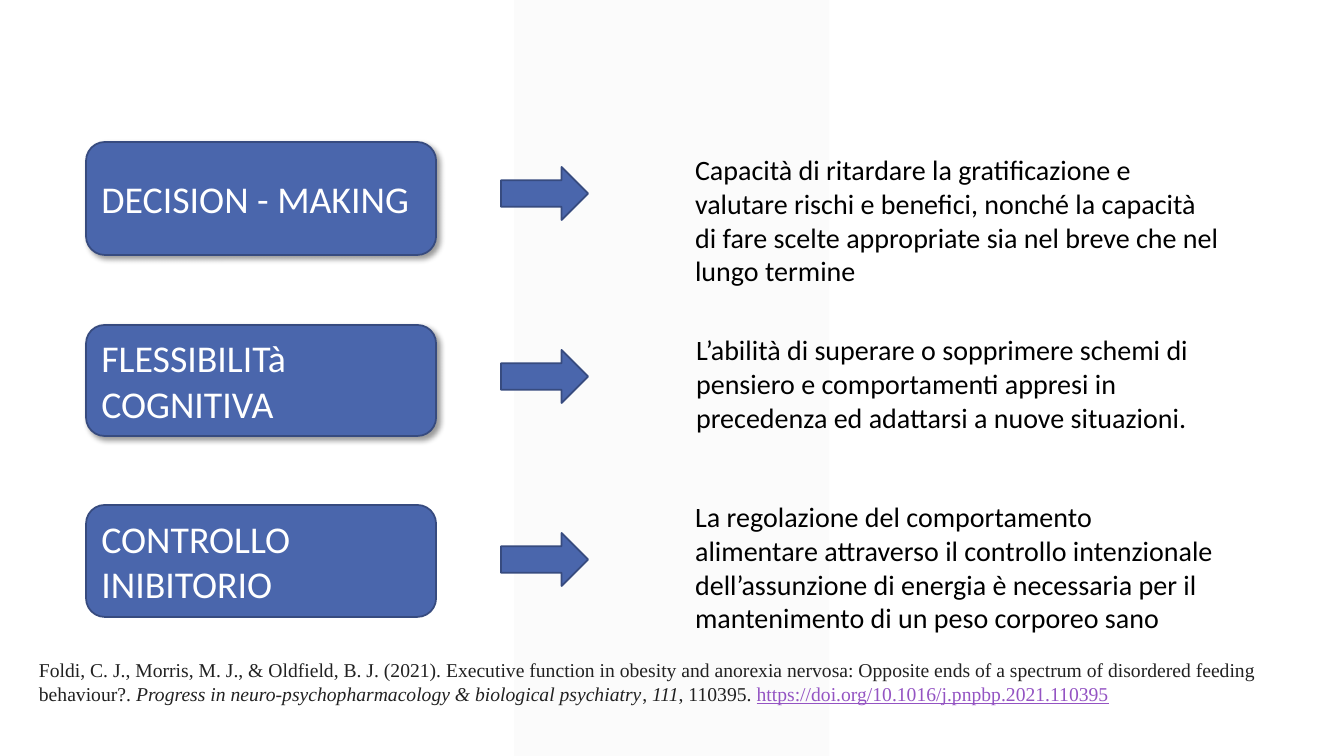
import pptx
import pptx.util
import pptx.dml.color
import pptx.enum.shapes
import pptx.enum.text
import pptx.oxml.ns
from dataclasses import dataclass
from lxml import etree

FUNCTIONS = [
    {"name": "DECISION - MAKING", "name_box": (86, 142, 350, 113), "shadow": True,
     "meaning": "Capacità di ritardare la gratificazione e valutare rischi e benefici, nonché la capacità di fare scelte appropriate sia nel breve che nel lungo termine",
     "meaning_box": (685, 148, 546, 146)},
    {"name": "FLESSIBILITà COGNITIVA", "name_box": (86, 325, 350, 111), "shadow": True,
     "meaning": "L’abilità di superare o sopprimere schemi di pensiero e comportamenti appresi in precedenza ed adattarsi a nuove situazioni.",
     "meaning_box": (686, 328, 543, 112)},
    {"name": "CONTROLLO INIBITORIO", "name_box": (86, 505, 350, 112), "shadow": False,
     "meaning": "La regolazione del comportamento alimentare attraverso il controllo intenzionale dell’assunzione di energia è necessaria per il mantenimento di un peso corporeo sano",
     "meaning_box": (685, 495, 543, 146)},
]
CITATION = [
    ("Foldi, C. J., Morris, M. J., & Oldfield, B. J. (2021). Executive function in obesity and anorexia nervosa: Opposite ends of a spectrum of disordered feeding behaviour?. ", {}),
    ("Progress in neuro-psychopharmacology & biological psychiatry", {"italic": True}),
    (", ", {}),
    ("111", {"italic": True}),
    (", 110395. ", {}),
    ("https://doi.org/10.1016/j.pnpbp.2021.110395", {"color": "9454C3", "underline": True}),
]
CITATION_BOX = (29, 653, 1314, 57)
BAND_BOX = (514, 0, 315, 756)
ARROW_LEFT, ARROW_TOP, ARROW_WIDTH, ARROW_HEIGHT = 501, 167, 87, 53
ARROW_PITCH = 183


@dataclass(frozen=True)
class Theme:
    blue: str = "4A66AC"
    outline: str = "374B7F"
    band: str = "F2F2F2"
    white: str = "FFFFFF"
    black: str = "000000"
    citation: str = "212121"
    sans: str = "Calibri"
    serif: str = "Times New Roman"
    name_size: int = 27
    meaning_size: int = 20
    citation_size: int = 14
    line_width: float = 1.25


THEME = Theme()
EMU_PER_PX = 914400 / 100.8


def emu(*lengths):
    return [round(length * EMU_PER_PX) for length in lengths]


def rgb(color):
    return pptx.dml.color.RGBColor.from_string(color)


def child(parent, tag, **attributes):
    return etree.SubElement(parent, pptx.oxml.ns.qn(tag), attributes)


def write(paragraph, text, *, size, font, color, italic=False, underline=False):
    run = paragraph.add_run()
    run.text = text
    run.font.size = pptx.util.Pt(size)
    run.font.name = font
    run.font.color.rgb = rgb(color)
    run.font.italic = italic
    run.font.underline = underline


def add_block(slide, kind, box, fill, outlined=True):
    block = slide.shapes.add_shape(kind, *emu(*box))
    block.shadow.inherit = False
    block.fill.solid()
    block.fill.fore_color.rgb = rgb(fill)
    if outlined:
        block.line.color.rgb = rgb(THEME.outline)
        block.line.width = pptx.util.Pt(THEME.line_width)
    else:
        block.line.fill.background()
    return block


def add_paragraph_box(slide, box):
    frame = slide.shapes.add_textbox(*emu(*box)).text_frame
    frame.word_wrap = True
    frame.auto_size = pptx.enum.text.MSO_AUTO_SIZE.SHAPE_TO_FIT_TEXT
    return frame.paragraphs[0]


def cast_shadow(block):
    effects = block.element.spPr.find(pptx.oxml.ns.qn("a:effectLst"))
    outer = child(effects, "a:outerShdw", blurRad="50800", dist="38100",
                  dir="2700000", algn="tl", rotWithShape="0")
    color = child(outer, "a:srgbClr", val=THEME.black)
    child(color, "a:alpha", val="40000")


def add_band(slide):
    band = add_block(slide, pptx.enum.shapes.MSO_SHAPE.PARALLELOGRAM, BAND_BOX, THEME.band, False)
    band.adjustments[0] = 0
    color = band.element.spPr.find(
        pptx.oxml.ns.qn("a:solidFill") + "/" + pptx.oxml.ns.qn("a:srgbClr"))
    child(color, "a:alpha", val="30000")


def add_name(slide, function):
    name = add_block(slide, pptx.enum.shapes.MSO_SHAPE.ROUNDED_RECTANGLE,
                     function["name_box"], THEME.blue)
    if function["shadow"]:
        cast_shadow(name)
    name.text_frame.word_wrap = True
    name.text_frame.vertical_anchor = pptx.enum.text.MSO_ANCHOR.MIDDLE
    paragraph = name.text_frame.paragraphs[0]
    paragraph.alignment = pptx.enum.text.PP_ALIGN.LEFT
    write(paragraph, function["name"], size=THEME.name_size, font=THEME.sans, color=THEME.white)


def main():
    deck = pptx.Presentation()
    deck.slide_width = pptx.util.Inches(13.33)
    deck.slide_height = pptx.util.Inches(7.5)
    slide = deck.slides.add_slide(deck.slide_layouts[6])

    add_band(slide)
    for row, function in enumerate(FUNCTIONS):
        add_name(slide, function)
        arrow_box = (ARROW_LEFT, ARROW_TOP + row * ARROW_PITCH, ARROW_WIDTH, ARROW_HEIGHT)
        add_block(slide, pptx.enum.shapes.MSO_SHAPE.RIGHT_ARROW, arrow_box, THEME.blue)
        write(add_paragraph_box(slide, function["meaning_box"]), function["meaning"],
              size=THEME.meaning_size, font=THEME.sans, color=THEME.black)

    citation = add_paragraph_box(slide, CITATION_BOX)
    for text, emphasis in CITATION:
        style = {"size": THEME.citation_size, "font": THEME.serif, "color": THEME.citation}
        write(citation, text, **(style | emphasis))

    deck.save("out.pptx")


if __name__ == "__main__":
    main()
